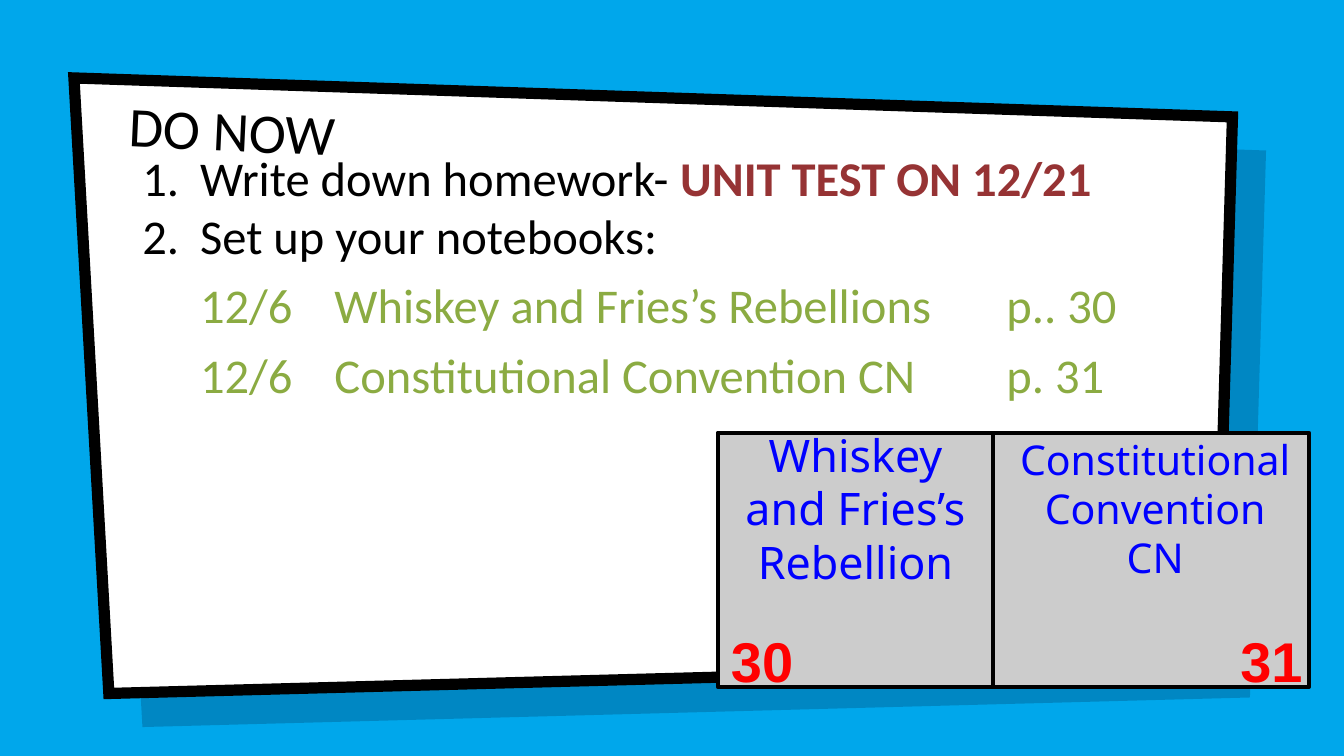
import pptx
import pptx.util
import pptx.dml.color
import pptx.enum.shapes
import pptx.enum.text
import pptx.oxml.ns
from lxml import etree

Inches = pptx.util.Inches
Pt = pptx.util.Pt
Align = pptx.enum.text.PP_ALIGN
Anchor = pptx.enum.text.MSO_ANCHOR
qn = pptx.oxml.ns.qn

THEME = {
    "background": "00A7EB", "shade": "001936", "panel": "FFFFFF", "ink": "000000",
    "alert": "963334", "entry": "8BAB42", "page": "CCCCCC", "topic": "0000FF",
    "number": "FF0000", "heading_size": 30, "body_size": 26, "number_size": 30,
    "body_font": "Calibri", "topic_font": "Noto Sans", "number_font": "Arial",
}


def color(name):
    return pptx.dml.color.RGBColor.from_string(THEME[name])


def add_run(paragraph, text, ink, size, name, bold=False):
    run = paragraph.add_run()
    run.text = text
    for key, value in {"name": name, "size": Pt(size), "bold": bold}.items():
        setattr(run.font, key, value)
    run.font.color.rgb = color(ink)


# Widescreen slide, 16 by 9
presentation = pptx.Presentation()
presentation.slide_width = Inches(10)
presentation.slide_height = Inches(10) * 9 // 16
slide = presentation.slides.add_slide(presentation.slide_layouts[5])
slide.background.fill.solid()
slide.background.fill.fore_color.rgb = color("background")
frame_format = {"word_wrap": True, "auto_size": pptx.enum.text.MSO_AUTO_SIZE.NONE}
for side in ("left", "top", "right", "bottom"):
    frame_format[f"margin_{side}"] = Inches(0.1)

# Slanted panel over its offset shade
corners = [(0.55, 0.58), (9.17, 0.87), (9.05, 4.94), (0.81, 5.16)]
for offset, fill in ((0.25, "shade"), (0, "panel")):
    points = [(Inches(x + offset), Inches(y + offset)) for x, y in corners]
    builder = slide.shapes.build_freeform(*points[0], scale=1.0)
    builder.add_line_segments(points[1:], close=True)
    shape = builder.convert_to_shape()
    shape.shadow.inherit = False
    shape.fill.solid()
    shape.fill.fore_color.rgb = color(fill)
    if fill == "shade":
        tint = shape.fill._xPr.find(".//" + qn("a:srgbClr"))
        etree.SubElement(tint, qn("a:alpha"), val="22000")
        shape.line.fill.background()
    else:
        shape.line.color.rgb = color("ink")
        shape.line.width = Pt(6)
        etree.SubElement(shape.line._ln, qn("a:miter"), lim="800000")

# Title, moved in front of the panel
title = slide.shapes.title
slide.shapes._spTree.append(title._element)
title.left, title.top, title.width, title.height = map(Inches, (0.86, 0.62, 7.69, 0.83))
title.rotation = 2.7
for key, value in {**frame_format, "vertical_anchor": Anchor.BOTTOM}.items():
    setattr(title.text_frame, key, value)
paragraph = title.text_frame.paragraphs[0]
paragraph.alignment = Align.LEFT
add_run(paragraph, "DO NOW", "ink", THEME["heading_size"], THEME["body_font"])

# Numbered tasks and the notebook entries below them
tasks = [
    (True, [("Write down homework- ", "ink", False), ("UNIT TEST ON 12/21", "alert", True)]),
    (True, [("Set up your notebooks:", "ink", False)]),
    (False, [("12/6\tWhiskey and Fries’s Rebellions\tp.. 30", "entry", False)]),
    (False, [("12/6\tConstitutional Convention CN\tp. 31", "entry", False)]),
]
body = slide.shapes.add_textbox(*map(Inches, (0.89, 1, 8.22, 2.18))).text_frame
for key, value in frame_format.items():
    setattr(body, key, value)
for index, (numbered, runs) in enumerate(tasks):
    paragraph = body.paragraphs[0] if index == 0 else body.add_paragraph()
    properties = paragraph._p.get_or_add_pPr()
    properties.set("marL", str(Inches(0.5)))
    properties.set("indent", str(Inches(-0.43 if numbered else 0)))
    properties.set("defTabSz", str(Inches(1)))
    if numbered:
        bullet_color = etree.SubElement(properties, qn("a:buClr"))
        etree.SubElement(bullet_color, qn("a:srgbClr"), val=THEME["ink"])
        etree.SubElement(properties, qn("a:buFont"), typeface=THEME["body_font"])
        etree.SubElement(properties, qn("a:buAutoNum"), type="arabicPeriod")
    else:
        paragraph.space_before = Pt(6)
    for text, ink, bold in runs:
        add_run(paragraph, text, ink, THEME["body_size"], THEME["body_font"], bold)

# Two facing notebook pages
pages = []
for left, width in ((5.34, 2.05), (7.39, 2.35)):
    page = slide.shapes.add_shape(
        pptx.enum.shapes.MSO_SHAPE.RECTANGLE,
        Inches(left), Inches(3.22), Inches(width), Inches(1.89))
    page.shadow.inherit = False
    page.fill.solid()
    page.fill.fore_color.rgb = color("page")
    page.line.color.rgb = color("ink")
    page.line.width = Pt(2.25)
    pages.append(page)

# Topics and page numbers; the left number sits low inside its page
topic_boxes = [
    slide.shapes.add_textbox(*map(Inches, (left, 3.22, width, 1.12)))
    for left, width in ((5.34, 2.05), (7.45, 2.29))
]
right_number = slide.shapes.add_textbox(*map(Inches, (9.13, 4.55, 1.29, 0.73)))
low = {"margin_top": Inches(1.5), "margin_bottom": 0}
labels = [
    (pages[0], "30", "number", THEME["number_size"], Align.LEFT, low),
    (topic_boxes[0], "Whiskey and Fries’s Rebellion", "topic", 24, Align.CENTER, {}),
    (topic_boxes[1], "Constitutional Convention CN", "topic", 22, Align.CENTER, {}),
    (right_number, "31", "number", THEME["number_size"], Align.LEFT, {}),
]
for shape, text, role, size, alignment, margins in labels:
    frame = shape.text_frame
    for key, value in {**frame_format, "vertical_anchor": Anchor.MIDDLE, **margins}.items():
        setattr(frame, key, value)
    frame.paragraphs[0].alignment = alignment
    add_run(frame.paragraphs[0], text, role, size, THEME[role + "_font"], role == "number")

presentation.save("out.pptx")
